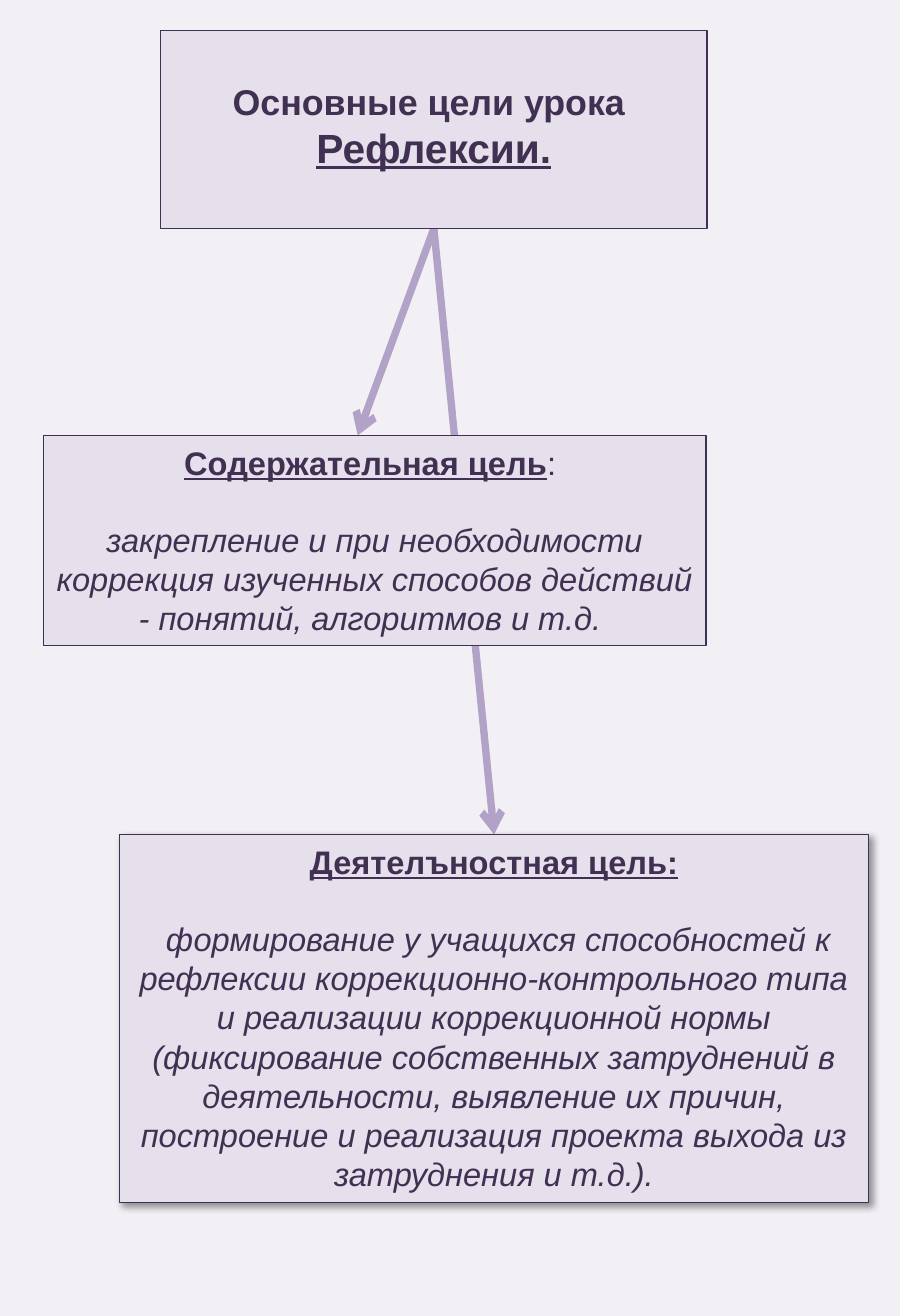
from lxml import etree
from pptx import Presentation
from pptx.dml.color import RGBColor
from pptx.enum.shapes import MSO_CONNECTOR, MSO_SHAPE
from pptx.enum.text import MSO_ANCHOR, PP_ALIGN
from pptx.oxml import parse_xml
from pptx.oxml.ns import nsdecls, qn
from pptx.util import Cm, Pt

RECTANGLE = MSO_SHAPE.RECTANGLE
STRAIGHT = MSO_CONNECTOR.STRAIGHT
TOP = MSO_ANCHOR.TOP
CENTER = PP_ALIGN.CENTER
TOP_SIDE, BOTTOM_SIDE = 0, 2

COLORS = {
    "background": "F2F0F5",
    "box": "E6E0EC",
    "ink": "403152",
    "arrow": "B3A2C7",
    "shadow": "000000",
}
BOLD = {"bold": True}
HEADING = {"bold": True, "underline": True}
ITALIC = {"italic": True}


def color(name):
    return RGBColor.from_string(COLORS[name])


class GoalSlide:
    font_name = "Arial"
    body_size = 20

    def __init__(self, presentation):
        self.slide = presentation.slides.add_slide(presentation.slide_layouts[6])
        background = self.slide.background.fill
        background.solid()
        background.fore_color.rgb = color("background")

    def arrow(self, start, end):
        x1, y1, x2, y2 = (Cm(value) for value in start + end)
        arrow = self.slide.shapes.add_connector(STRAIGHT, x1, y1, x2, y2)
        arrow.line.color.rgb = color("arrow")
        arrow.line.width = Pt(4.5)
        etree.SubElement(arrow.line._get_or_add_ln(), qn("a:tailEnd"), type="arrow")
        etree.SubElement(arrow._element.spPr, qn("a:effectLst"))
        return arrow

    def box(self, left, top, width, height, paragraphs, inset_top=0.16, gap=0):
        box = self.slide.shapes.add_shape(
            RECTANGLE, Cm(left), Cm(top), Cm(width), Cm(height))
        box.shadow.inherit = False
        box.fill.solid()
        box.fill.fore_color.rgb = color("box")
        box.line.color.rgb = color("ink")
        box.line.width = Pt(0.75)
        frame = box.text_frame
        frame_format = {
            "word_wrap": True,
            "vertical_anchor": TOP,
            "margin_left": Cm(0.28),
            "margin_right": Cm(0.28),
            "margin_top": Cm(inset_top),
            "margin_bottom": Cm(0.13),
        }
        for name, value in frame_format.items():
            setattr(frame, name, value)
        for index, runs in enumerate(paragraphs):
            paragraph = frame.add_paragraph() if index else frame.paragraphs[0]
            paragraph.alignment = CENTER
            if index:
                paragraph.space_before = Pt(gap)
            for text, size, style in runs:
                self.run(paragraph, text, size, style)
        return box

    def run(self, paragraph, text, size, style):
        run = paragraph.add_run()
        run.text = text
        run.font.color.rgb = color("ink")
        font_format = {"name": self.font_name, "size": Pt(size), **style}
        for name, value in font_format.items():
            setattr(run.font, name, value)

    def goal(self, left, top, width, height, heading, ending, description):
        heading_runs = [(heading, self.body_size, HEADING)]
        if ending:
            heading_runs.append((ending, self.body_size, {}))
        description_runs = [(description, self.body_size, ITALIC)]
        return self.box(left, top, width, height,
                        [heading_runs, description_runs], gap=23.5)

    def cast_shadow(self, box):
        effects = box._element.spPr.find(qn("a:effectLst"))
        effects.append(parse_xml(
            f'<a:outerShdw {nsdecls("a")} blurRad="{Pt(4)}" dist="{Pt(3)}" '
            'dir="2700000" algn="tl" rotWithShape="0">'
            f'<a:srgbClr val="{COLORS["shadow"]}"><a:alpha val="40000"/></a:srgbClr>'
            '</a:outerShdw>'))


def main():
    presentation = Presentation()
    presentation.slide_width = Cm(19.5)
    presentation.slide_height = Cm(28.5)
    page = GoalSlide(presentation)

    title_bottom = (9.4, 4.95)
    to_activity = page.arrow(title_bottom, (10.7, 18.07))
    to_content = page.arrow(title_bottom, (7.75, 9.43))

    activity = page.goal(
        2.59, 18.07, 16.23, 7.98, "Деятелъностная цель:", "",
        " формирование у учащихся способностей к рефлексии "
        "коррекционно-контрольного типа и реализации коррекционной нормы "
        "(фиксирование собственных затруднений в деятельности, выявление их "
        "причин, построение и реализация проекта выхода из затруднения и т.д.).")
    page.cast_shadow(activity)

    title = page.box(
        3.48, 0.66, 11.84, 4.29,
        [[("Основные цели урока ", 22, BOLD)], [("Рефлексии.", 25, HEADING)]],
        inset_top=1.06)

    page.goal(
        0.94, 9.43, 14.36, 4.55, "Содержательная цель", ": ",
        "закрепление и при необходимости коррекция изученных способов "
        "действий - понятий, алгоритмов и т.д. ")

    for arrow in (to_activity, to_content):
        arrow.begin_connect(title, BOTTOM_SIDE)
    to_activity.end_connect(activity, TOP_SIDE)

    presentation.save("out.pptx")


if __name__ == "__main__":
    main()
